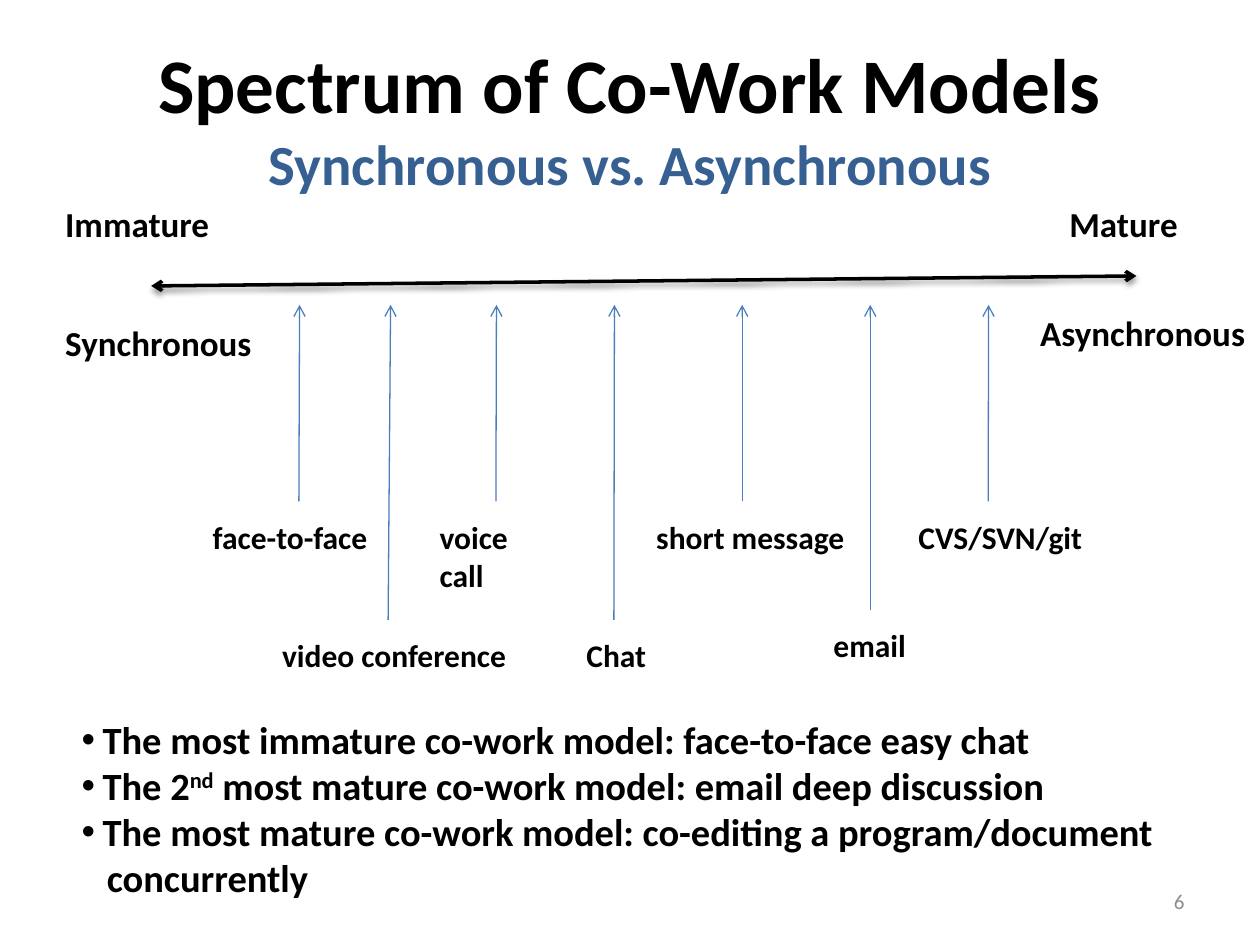
import pptx
import pptx.dml.color
import pptx.enum.shapes
import pptx.enum.text
import pptx.oxml.ns
import pptx.util
from lxml import etree

Pt = pptx.util.Pt
ALIGN = pptx.enum.text.PP_ALIGN
ANCHOR = pptx.enum.text.MSO_ANCHOR
FIT = pptx.enum.text.MSO_AUTO_SIZE


def color(value):
    return pptx.dml.color.RGBColor.from_string(value)


def add_node(parent, tag, **attributes):
    return etree.SubElement(parent, pptx.oxml.ns.qn(tag), attributes)


class SlideBuilder:
    font = "Calibri"
    black, blue, gray, arrow_blue = "000000", "376092", "8C8C8C", "4B7EBC"

    def __init__(self, slide):
        self.slide = slide

    def box(self, left, top, width, height, **frame_format):
        """Add an empty text box and return its text frame."""
        shape = self.slide.shapes.add_textbox(Pt(left), Pt(top), Pt(width), Pt(height))
        settings = {"word_wrap": True, "auto_size": FIT.NONE, **frame_format}
        for name, value in settings.items():
            setattr(shape.text_frame, name, value)
        return shape.text_frame

    def run(self, paragraph, text, size, fill=black, bold=True, raised=False):
        run = paragraph.add_run()
        run.text = text
        for name, value in {"name": self.font, "size": Pt(size), "bold": bold}.items():
            setattr(run.font, name, value)
        run.font.color.rgb = color(fill)
        if raised:
            run.font._element.set("baseline", "30000")

    def label(self, text, left, top, width, size):
        frame = self.box(left, top, width, size * 1.22 + 7.2,
                         word_wrap=False, auto_size=FIT.SHAPE_TO_FIT_TEXT)
        self.run(frame.paragraphs[0], text, size)

    def indent(self, paragraph, margin, bullet):
        properties = paragraph._p.get_or_add_pPr()
        properties.set("marL", str(Pt(margin)))
        properties.set("indent", str(-Pt(margin) if bullet else 0))
        if bullet:
            add_node(properties, "a:buFont", typeface="Arial")
            add_node(properties, "a:buChar", char="•")

    def arrow(self, start, end, fill, width, both_ends=False, shadow=False):
        connector = self.slide.shapes.add_connector(
            pptx.enum.shapes.MSO_CONNECTOR.STRAIGHT, *map(Pt, start + end))
        connector.line.color.rgb = color(fill)
        connector.line.width = Pt(width)
        line = connector.line._get_or_add_ln()
        if both_ends:
            add_node(line, "a:headEnd", type="arrow")
        add_node(line, "a:tailEnd", type="arrow")
        effects = add_node(connector._element.spPr, "a:effectLst")
        if shadow:
            outer = add_node(effects, "a:outerShdw", blurRad=str(Pt(3.1)),
                             dist=str(Pt(1.6)), dir="5400000", rotWithShape="0")
            shade = add_node(outer, "a:srgbClr", val=self.black)
            add_node(shade, "a:alpha", val="38000")


def main():
    presentation = pptx.Presentation()
    presentation.slide_width, presentation.slide_height = Pt(720), Pt(540)
    slide = presentation.slides.add_slide(presentation.slide_layouts[6])
    builder = SlideBuilder(slide)

    # Title and subtitle
    frame = builder.box(36, 21.6, 648, 90, vertical_anchor=ANCHOR.MIDDLE)
    title = frame.paragraphs[0]
    title.alignment = ALIGN.CENTER
    builder.run(title, "Spectrum of Co-Work Models", 44.1)
    title.add_line_break()
    builder.run(title, "Synchronous vs. Asynchronous", 32.4, builder.blue)

    # Slide number
    frame = builder.box(516, 500.5, 168, 28.75, vertical_anchor=ANCHOR.MIDDLE)
    frame.paragraphs[0].alignment = ALIGN.RIGHT
    builder.run(frame.paragraphs[0], "6", 12, builder.gray, bold=False)

    # Spectrum axis and the names of its ends
    builder.arrow((86.4, 163.4), (649.4, 157.7), builder.black, 2,
                  both_ends=True, shadow=True)
    for text, left, top, width in (
        ("Immature", 30.2, 112.3, 97),
        ("Mature", 604, 112.3, 77),
        ("Synchronous", 30.2, 180, 122),
        ("Asynchronous", 587.3, 174.2, 132.5),
    ):
        builder.label(text, left, top, width, 20)

    # Models: arrow foot x, arrow tip x, arrow foot y, label left, label width
    tip_y, upper, lower = 174.2, 286.5, 354.2
    for text, foot_x, tip_x, foot_y, left, width in (
        ("face-to-face", 170.8, 171.2, upper, 114.5, 103.7),
        ("video conference", 221.8, 223.2, lower, 154.1, 143.3),
        ("voice call", 283.4, 283.7, upper, 244.1, 82),
        ("Chat", 350.8, 351.1, lower, 328, 51),
        ("short message", 424.1, 424.1, upper, 367.9, 123.1),
        ("email", 497.3, 497.3, lower - 5.7, 469.2, 56.2),
        ("CVS/SVN/git", 564.7, 564.9, upper, 517.7, 108.7),
    ):
        builder.arrow((foot_x, foot_y), (tip_x, tip_y), builder.arrow_blue, 0.75)
        builder.label(text, left, foot_y + 5.8, width, 18)

    # Conclusions: left margin, bullet, runs of (text, raised)
    frame = builder.box(39.6, 405.4, 635.8, 113.8, auto_size=FIT.SHAPE_TO_FIT_TEXT)
    for index, (margin, bullet, runs) in enumerate((
        (12, True, [("The most immature co-work model: face-to-face easy chat", False)]),
        (12, True, [("The 2", False), ("nd", True),
                    (" most mature co-work model: email deep discussion", False)]),
        (12, True, [("The most mature co-work model: co-editing a program/document", False)]),
        (14.4, False, [("concurrently", False)]),
    )):
        paragraph = frame.add_paragraph() if index else frame.paragraphs[0]
        builder.indent(paragraph, margin, bullet)
        for text, raised in runs:
            builder.run(paragraph, text, 22, raised=raised)

    presentation.save("out.pptx")


if __name__ == "__main__":
    main()
